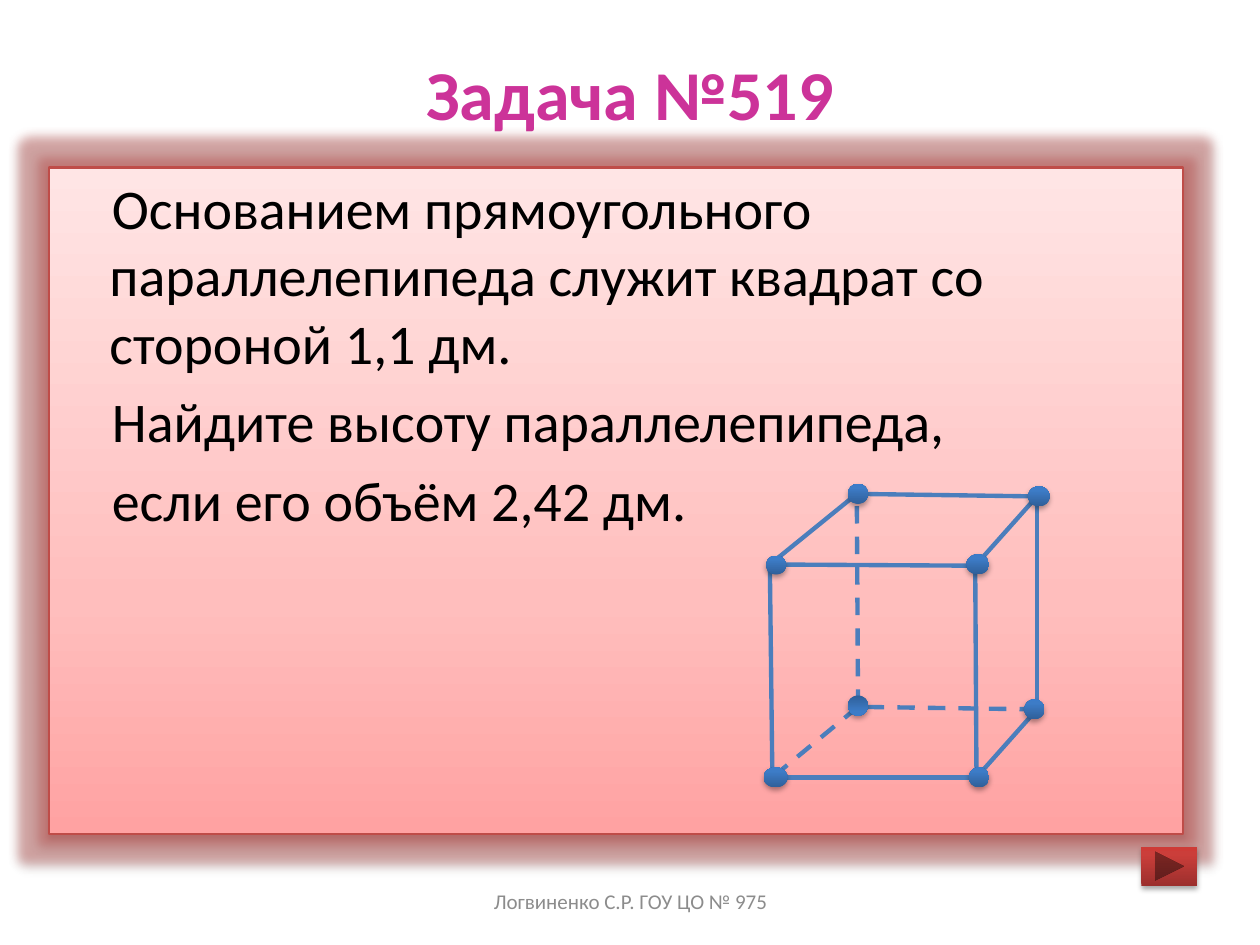
from copy import deepcopy
from dataclasses import dataclass

from lxml import etree
from pptx import Presentation
from pptx import util as u
from pptx.dml.color import RGBColor
from pptx.enum import dml, shapes, text
from pptx.oxml.ns import qn
from pptx.slide import Slide

COLORS = {
    "title": "CC3399", "body": "000000", "footer": "8C8C8C",
    "border": "BF4C48", "edge": "4B7EBC", "glow": "C0504D", "shadow": "000000",
}
PANEL_STOPS = [(0, "FFA2A2"), (0.35, "FFBEBD"), (1, "FFE5E5")]
BUTTON_STOPS = [(0, "9C2F2D"), (0.8, "CB3E3A"), (1, "CE3B37")]
BALL_STOPS = [(0, "2F5F99"), (0.8, "3D7CC7"), (1, "3A7CCB")]

PROBLEM = [
    "Основанием прямоугольного параллелепипеда служит квадрат со стороной 1,1 дм.",
    "Найдите высоту параллелепипеда,",
    "если его объём 2,42 дм.",
]

BOTTOM = [(6.13, 6.17), (7.75, 6.17), (8.23, 5.63), (6.81, 5.61)]
TOP = [(6.11, 4.48), (7.74, 4.49), (8.23, 3.94), (6.8, 3.92)]
HIDDEN_CORNER = 3
HIDDEN_BALL = (6.73, 5.52, 0.16, 0.16)
BALLS = [
    (6.08, 4.41, 0.16, 0.15), (8.13, 5.55, 0.16, 0.16),
    (6.73, 3.84, 0.16, 0.16), (8.16, 3.86, 0.17, 0.16),
    (7.67, 4.4, 0.18, 0.16), (6.06, 6.09, 0.19, 0.16),
    HIDDEN_BALL, (7.69, 6.09, 0.16, 0.16),
]


@dataclass
class SlideBuilder:
    """Holds the slide and its style and draws each kind of element."""

    slide: Slide
    font: str = "Calibri"
    edge_width: float = 2.5

    def fill_text(self, shape, lines, size, color, align, anchor, bold=False):
        frame = shape.text_frame
        frame.word_wrap = True
        frame.vertical_anchor = anchor
        frame.text = "\n".join(lines)
        for paragraph in frame.paragraphs:
            paragraph.alignment = align
            for run in paragraph.runs:
                run.font.name = self.font
                run.font.size = u.Pt(size)
                run.font.bold = bold
                run.font.color.rgb = RGBColor.from_string(COLORS[color])

    def label(self, box, line, size, color, bold=False):
        shape = self.slide.shapes.add_textbox(*map(u.Inches, box))
        self.fill_text(shape, [line], size, color, text.PP_ALIGN.CENTER,
                       text.MSO_ANCHOR.MIDDLE, bold)

    def effect(self, shape, tag, color, alpha, **lengths):
        effects = shape._element.spPr.find(qn("a:effectLst"))
        attributes = {name: str(int(value)) for name, value in lengths.items()}
        effect = etree.SubElement(effects, qn(tag), attributes)
        fill = etree.SubElement(effect, qn("a:srgbClr"), val=COLORS[color])
        etree.SubElement(fill, qn("a:alpha"), val=str(alpha * 1000))

    def solid(self, kind, box, stops, angle=90, shadow_alpha=35, glow=0):
        shape = self.slide.shapes.add_shape(kind, *map(u.Inches, box))
        shape.fill.gradient()
        shape.fill.gradient_angle = angle
        stop_list = shape._element.spPr.find(".//" + qn("a:gsLst"))
        stop_list.append(deepcopy(stop_list[-1]))
        for stop, (position, color) in zip(shape.fill.gradient_stops, stops):
            stop.position = position
            stop.color.rgb = RGBColor.from_string(color)
        shape.line.fill.background()
        shape.shadow.inherit = False
        if glow:
            self.effect(shape, "a:glow", "glow", 40, rad=u.Pt(glow))
        self.effect(shape, "a:outerShdw", "shadow", shadow_alpha,
                    blurRad=u.Pt(3.1), dist=u.Pt(1.7), dir=5400000, rotWithShape=0)
        return shape

    def panel(self, box, lines):
        shape = self.solid(shapes.MSO_SHAPE.RECTANGLE, box, PANEL_STOPS,
                           shadow_alpha=38, glow=11)
        shape.line.color.rgb = RGBColor.from_string(COLORS["border"])
        shape.line.width = u.Pt(1.25)
        self.fill_text(shape, lines, 32, "body", text.PP_ALIGN.LEFT,
                       text.MSO_ANCHOR.TOP)
        for index, paragraph in enumerate(shape.text_frame.paragraphs):
            properties = paragraph._p.get_or_add_pPr()
            properties.set("marL", str(u.Inches(0.38)))
            properties.set("indent", str(u.Inches(0.02)))
            if index:
                paragraph.space_before = u.Pt(6.4)

    def edge(self, start, end, hidden=False):
        line = self.slide.shapes.add_connector(
            shapes.MSO_CONNECTOR.STRAIGHT, *map(u.Inches, start + end))
        line.line.color.rgb = RGBColor.from_string(COLORS["edge"])
        line.line.width = u.Pt(self.edge_width)
        if hidden:
            line.line.dash_style = dml.MSO_LINE.DASH
        etree.SubElement(line._element.spPr, qn("a:effectLst"))

    def prism(self):
        for corner in range(4):
            following = (corner + 1) % 4
            self.edge(BOTTOM[corner], BOTTOM[following],
                      HIDDEN_CORNER in (corner, following))
            self.edge(TOP[corner], TOP[following])
            self.edge(BOTTOM[corner], TOP[corner], corner == HIDDEN_CORNER)
        for ball in BALLS:
            self.solid(shapes.MSO_SHAPE.OVAL, ball, BALL_STOPS,
                       angle=270 if ball == HIDDEN_BALL else 90)


def main():
    presentation = Presentation()
    presentation.slide_width = u.Inches(10)
    presentation.slide_height = u.Inches(7.5)
    slide = presentation.slides.add_slide(presentation.slide_layouts[6])
    builder = SlideBuilder(slide)
    builder.label((0.5, 0.3, 9, 0.87), "Задача №519", 40, "title", bold=True)
    builder.panel((0.39, 1.33, 9, 5.29), PROBLEM)
    builder.solid(shapes.MSO_SHAPE.ACTION_BUTTON_FORWARD_OR_NEXT,
                  (9.06, 6.72, 0.44, 0.31), BUTTON_STOPS)
    builder.prism()
    builder.label((3.42, 6.95, 3.17, 0.4), "Логвиненко С.Р. ГОУ ЦО № 975", 12, "footer")
    presentation.save("out.pptx")


if __name__ == "__main__":
    main()
